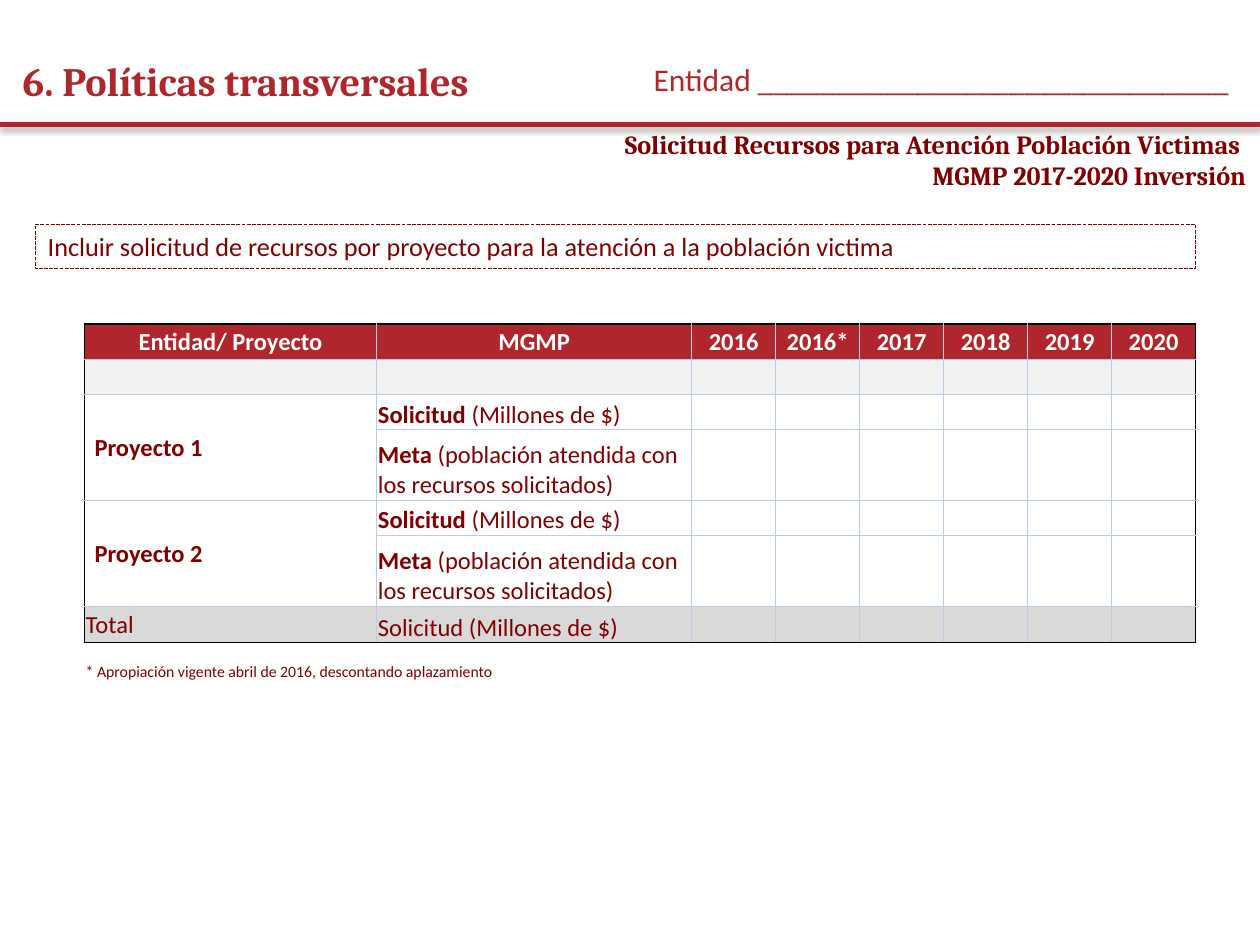
import pptx
import pptx.util
import pptx.dml.color
import pptx.enum.dml
import pptx.enum.shapes
import pptx.enum.text
import pptx.oxml.ns
from dataclasses import dataclass
from lxml import etree

Inches, Pt = pptx.util.Inches, pptx.util.Pt
ALIGN = pptx.enum.text.PP_ALIGN
ANCHOR = pptx.enum.text.MSO_ANCHOR
qn = pptx.oxml.ns.qn


@dataclass(frozen=True)
class Theme:
    red: str = "AF272D"
    maroon: str = "800000"
    white: str = "FFFFFF"
    black: str = "000000"
    grid: str = "B8CCE4"
    blank_fill: str = "F2F2F2"
    total_fill: str = "D9D9D9"
    heading_font: str = "Cambria"
    body_font: str = "Calibri"
    title_size: int = 23
    entity_size: int = 18
    text_size: int = 15
    table_size: int = 14
    note_size: int = 9


THEME = Theme()

# Content: a run is (text, bold)
TITLE = "6. Políticas transversales"
ENTITY = "Entidad " + "_" * 30
SUBTITLE = ["Solicitud Recursos para Atención Población Victimas ", "MGMP 2017-2020 Inversión"]
INSTRUCTION = "Incluir solicitud de recursos por proyecto para la atención a la población victima"
HEADERS = ["Entidad/ Proyecto", "MGMP", "2016", "2016*", "2017", "2018", "2019", "2020"]
PROJECTS = ["Proyecto 1", "Proyecto 2"]
MEASURES = [
    [("Solicitud", True), (" (Millones de $)", False)],
    [("Meta ", True), ("(población atendida con los recursos solicitados)", False)],
]
TOTAL = ["Total", "Solicitud (Millones de $)"]
NOTE = "* Apropiación vigente abril de 2016, descontando aplazamiento"

# Table geometry, in inches
TABLE_LEFT, TABLE_TOP, TABLE_WIDTH = 0.67, 2.57, 8.82
LABEL_WIDTHS = [2.32, 2.5]
YEAR_COUNT = len(HEADERS) - len(LABEL_WIDTHS)
YEAR_WIDTH = (TABLE_WIDTH - sum(LABEL_WIDTHS)) / YEAR_COUNT
COLUMN_WIDTHS = LABEL_WIDTHS + [YEAR_WIDTH] * YEAR_COUNT
ROW_HEIGHTS = [0.28, 0.28] + [0.28, 0.56] * len(PROJECTS) + [0.29, 0.31]
NOTE_ROW = len(ROW_HEIGHTS) - 1
TOTAL_ROW = NOTE_ROW - 1


def rgb(color):
    return pptx.dml.color.RGBColor.from_string(color)


def add_run(paragraph, text, size, color, font=THEME.body_font, bold=False):
    run = paragraph.add_run()
    run.text = text
    run.font.name, run.font.size, run.font.bold = font, Pt(size), bold
    run.font.color.rgb = rgb(color)


def fill_frame(shape, lines, align=ALIGN.LEFT, anchor=ANCHOR.TOP, **style):
    frame = shape.text_frame
    frame.word_wrap = True
    frame.auto_size = pptx.enum.text.MSO_AUTO_SIZE.NONE
    frame.vertical_anchor = anchor
    for index, line in enumerate(lines):
        paragraph = frame.add_paragraph() if index else frame.paragraphs[0]
        paragraph.alignment = align
        add_run(paragraph, line, **style)


def add_rule(slide):
    rule = slide.shapes.add_connector(pptx.enum.shapes.MSO_CONNECTOR.STRAIGHT,
                                      0, Inches(0.99), Inches(10), Inches(0.99))
    rule.line.color.rgb = rgb(THEME.red)
    rule.line.width = Pt(3)
    effects = etree.SubElement(rule._element.spPr, qn("a:effectLst"))
    shadow = etree.SubElement(effects, qn("a:outerShdw"), blurRad=str(Pt(3.1)),
                              dist=str(Pt(1.8)), dir="5400000", rotWithShape="0")
    color = etree.SubElement(shadow, qn("a:srgbClr"), val=THEME.black)
    etree.SubElement(color, qn("a:alpha"), val="35000")


def add_headings(slide):
    title = slide.shapes.title
    title.left, title.top, title.width, title.height = map(Inches, (0.08, 0.36, 8.3, 0.55))
    fill_frame(title, [TITLE], anchor=ANCHOR.MIDDLE, size=THEME.title_size,
               color=THEME.red, font=THEME.heading_font, bold=True)

    entity = slide.shapes.add_textbox(*map(Inches, (4.69, 0.43, 5.16, 0.71)))
    fill_frame(entity, [ENTITY], ALIGN.RIGHT, size=THEME.entity_size, color=THEME.red)

    subtitle = slide.shapes.add_textbox(*map(Inches, (1.4, 1.07, 8.59, 0.39)))
    fill_frame(subtitle, SUBTITLE, ALIGN.RIGHT, ANCHOR.MIDDLE, size=THEME.text_size,
               color=THEME.maroon, font=THEME.heading_font, bold=True)

    instruction = slide.shapes.add_shape(pptx.enum.shapes.MSO_SHAPE.RECTANGLE,
                                         *map(Inches, (0.28, 1.78, 9.21, 0.35)))
    instruction.shadow.inherit = False
    instruction.fill.background()
    instruction.line.color.rgb = rgb(THEME.maroon)
    instruction.line.width = Pt(0.75)
    instruction.line.dash_style = pptx.enum.dml.MSO_LINE.SQUARE_DOT
    fill_frame(instruction, [INSTRUCTION], size=THEME.text_size, color=THEME.maroon)


def set_borders(cell, row, column):
    """Black outer frame, pale inner grid, nothing around the note row."""
    outer = {"L": column == 0, "R": column == len(HEADERS) - 1,
             "T": row in (0, NOTE_ROW), "B": row == TOTAL_ROW}
    properties = cell._tc.get_or_add_tcPr()
    for side, is_outer in outer.items():
        width = Pt(1) if is_outer else Pt(0.5)
        line = etree.SubElement(properties, qn("a:ln" + side), w=str(width))
        if row == NOTE_ROW and side != "T":
            etree.SubElement(line, qn("a:noFill"))
        else:
            solid = etree.SubElement(line, qn("a:solidFill"))
            etree.SubElement(solid, qn("a:srgbClr"), val=THEME.black if is_outer else THEME.grid)


def write_cell(cell, runs, anchor=ANCHOR.MIDDLE, align=ALIGN.LEFT, inset=0.01,
               size=THEME.table_size, color=THEME.maroon):
    cell.vertical_anchor = anchor
    cell.margin_left = Inches(inset)
    paragraph = cell.text_frame.paragraphs[0]
    paragraph.alignment = align
    for text, bold in runs:
        add_run(paragraph, text, size, color, bold=bold)


def add_budget_table(slide):
    table = slide.shapes.add_table(
        len(ROW_HEIGHTS), len(HEADERS), Inches(TABLE_LEFT), Inches(TABLE_TOP),
        Inches(TABLE_WIDTH), Inches(sum(ROW_HEIGHTS))).table
    table.first_row = table.horz_banding = False
    for column, width in zip(table.columns, COLUMN_WIDTHS):
        column.width = Inches(width)

    row_fills = {0: THEME.red, 1: THEME.blank_fill, TOTAL_ROW: THEME.total_fill}
    for row, height in enumerate(ROW_HEIGHTS):
        table.rows[row].height = Inches(height)
        for column in range(len(HEADERS)):
            cell = table.cell(row, column)
            cell.margin_left = cell.margin_right = cell.margin_top = Inches(0.01)
            cell.margin_bottom = 0
            set_borders(cell, row, column)
            if row in row_fills:
                cell.fill.solid()
                cell.fill.fore_color.rgb = rgb(row_fills[row])
            else:
                cell.fill.background()
            # Keeps empty cells from stretching their row
            etree.SubElement(cell.text_frame.paragraphs[0]._p, qn("a:endParaRPr"),
                             sz=str(THEME.table_size * 100))

    for column, header in enumerate(HEADERS):
        write_cell(table.cell(0, column), [(header, True)], align=ALIGN.CENTER, color=THEME.white)
    for index, project in enumerate(PROJECTS):
        first = 2 + index * len(MEASURES)
        table.cell(first, 0).merge(table.cell(first + len(MEASURES) - 1, 0))
        write_cell(table.cell(first, 0), [(project, True)], inset=0.08)
        for offset, measure in enumerate(MEASURES):
            write_cell(table.cell(first + offset, 1), measure, ANCHOR.BOTTOM)
    for column, (text, anchor) in enumerate(zip(TOTAL, (ANCHOR.MIDDLE, ANCHOR.BOTTOM))):
        write_cell(table.cell(TOTAL_ROW, column), [(text, False)], anchor)
    table.cell(NOTE_ROW, 0).merge(table.cell(NOTE_ROW, 1))
    write_cell(table.cell(NOTE_ROW, 0), [(NOTE, False)], ANCHOR.BOTTOM, size=THEME.note_size)


def main():
    deck = pptx.Presentation()
    deck.slide_width, deck.slide_height = Inches(10), Inches(7.5)
    slide = deck.slides.add_slide(deck.slide_layouts[5])
    add_rule(slide)
    add_headings(slide)
    add_budget_table(slide)
    deck.save("out.pptx")


if __name__ == "__main__":
    main()
